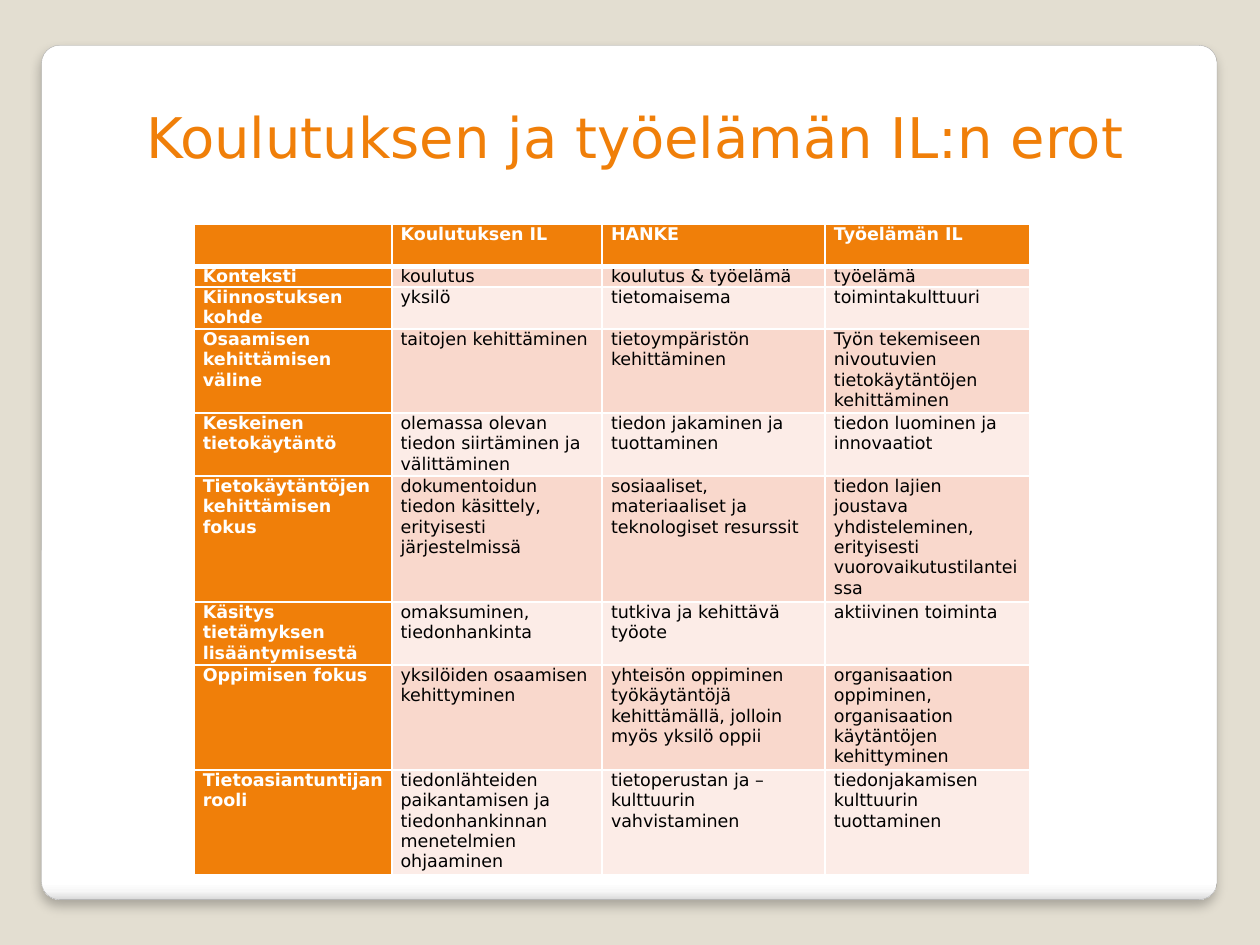
from lxml.etree import SubElement
from pptx import Presentation
from pptx.dml.color import RGBColor
from pptx.enum.shapes import MSO_SHAPE as Shape
from pptx.enum.text import MSO_ANCHOR as Anchor, MSO_AUTO_SIZE as Fit, PP_ALIGN as Align
from pptx.oxml import parse_xml
from pptx.oxml.ns import nsdecls, qn
from pptx.util import Inches, Pt

SAND = RGBColor(0xE3, 0xDE, 0xD1)
WHITE = RGBColor(0xFF, 0xFF, 0xFF)
BLACK = RGBColor(0, 0, 0)
GREY = RGBColor(0xA4, 0xA4, 0xA4)
ORANGE = RGBColor(0xF0, 0x7F, 0x09)
PINK = RGBColor(0xF9, 0xD8, 0xCC)
PALE = RGBColor(0xFC, 0xEC, 0xE7)
FONT = "DejaVu Sans"

STOPS = [(0, "FFFFFF"), (98, "FFFFFF"), (99, "F7F7F7"), (100, "DADADA")]
WIDTHS = [1.57, 1.67, 1.77, 1.62]
LINE = 1 / 6  # height of one text line in the table, in inches

# Each row: its height in text lines, then its cells
ROWS = [
    (2, "", "Koulutuksen IL", "HANKE", "Työelämän IL"),
    (1, "Konteksti", "koulutus", "koulutus & työelämä", "työelämä"),
    (2, "Kiinnostuksen kohde", "yksilö", "tietomaisema", "toimintakulttuuri"),
    (4, "Osaamisen kehittämisen väline", "taitojen kehittäminen",
     "tietoympäristön kehittäminen",
     "Työn tekemiseen nivoutuvien tietokäytäntöjen kehittäminen"),
    (3, "Keskeinen tietokäytäntö",
     "olemassa olevan tiedon siirtäminen ja välittäminen",
     "tiedon jakaminen ja tuottaminen", "tiedon luominen ja innovaatiot"),
    (6, "Tietokäytäntöjen kehittämisen fokus",
     "dokumentoidun tiedon käsittely, erityisesti järjestelmissä",
     "sosiaaliset, materiaaliset ja teknologiset resurssit",
     "tiedon lajien joustava yhdisteleminen, erityisesti vuorovaikutustilanteissa"),
    (3, "Käsitys tietämyksen lisääntymisestä", "omaksuminen, tiedonhankinta",
     "tutkiva ja kehittävä työote", "aktiivinen toiminta"),
    (5, "Oppimisen fokus", "yksilöiden osaamisen kehittyminen",
     "yhteisön oppiminen työkäytäntöjä kehittämällä, jolloin myös yksilö oppii",
     "organisaation oppiminen, organisaation käytäntöjen kehittyminen"),
    (5, "Tietoasiantuntijanrooli",
     "tiedonlähteiden paikantamisen ja tiedonhankinnan menetelmien ohjaaminen",
     "tietoperustan ja –kulttuurin vahvistaminen",
     "tiedonjakamisen kulttuurin tuottaminen"),
]


def style(par, size, color, bold=False):
    for run in par.runs:
        font = run.font
        font.name, font.size, font.bold = FONT, Pt(size), bold
        font.color.rgb = color


def add_panel(slide, x, y, w, h):
    panel = slide.shapes.add_shape(
        Shape.ROUNDED_RECTANGLE, Inches(x), Inches(y), Inches(w), Inches(h))
    panel.adjustments[0] = 0.021
    panel.line.color.rgb = GREY
    panel.line.width = Pt(0.16)
    panel.fill.gradient()
    panel.fill.gradient_angle = 270
    stops = panel._element.spPr.find(".//" + qn("a:gsLst"))
    for old in list(stops):
        stops.remove(old)
    for pos, color in STOPS:
        stop = SubElement(stops, qn("a:gs"), pos=str(pos * 1000))
        SubElement(stop, qn("a:srgbClr"), val=color)
    panel.shadow.inherit = False
    effects = panel._element.spPr.find(qn("a:effectLst"))
    effects.append(parse_xml(
        f'<a:outerShdw {nsdecls("a")} blurRad="{Pt(6)}" dist="{Pt(4)}" dir="5400000" '
        'algn="t" rotWithShape="0"><a:srgbClr val="000000"><a:alpha val="25000"/>'
        '</a:srgbClr></a:outerShdw>'))
    slide.shapes._spTree.insert(2, panel._element)  # behind the title


def set_title(slide, text, x, y, w, h):
    title = slide.shapes.title
    title.left, title.top = Inches(x), Inches(y)
    title.width, title.height = Inches(w), Inches(h)
    frame = title.text_frame
    frame.text = text
    frame.auto_size = Fit.NONE
    frame.vertical_anchor = Anchor.MIDDLE
    par = frame.paragraphs[0]
    par.alignment = Align.LEFT
    style(par, 32, ORANGE)


def set_edges(cell, top, bottom):
    """Draw white borders, with the top and bottom widths given in points."""
    props = cell._tc.get_or_add_tcPr()
    for i, (side, width) in enumerate(zip("LRTB", (1, 1, top, bottom))):
        props.insert(i, parse_xml(
            f'<a:ln{side} {nsdecls("a")} w="{Pt(width)}"><a:solidFill>'
            f'<a:srgbClr val="{WHITE}"/></a:solidFill></a:ln{side}>'))


def fill_cell(cell, text, row, col):
    head = row == 0 or col == 0
    cell.margin_left = cell.margin_right = Inches(0.07)
    cell.margin_top = cell.margin_bottom = 0
    cell.fill.solid()
    cell.fill.fore_color.rgb = ORANGE if head else PINK if row % 2 else PALE
    set_edges(cell, 3 if row == 1 else 1, 3 if row == 0 else 1)
    if text:
        cell.text_frame.text = text
        style(cell.text_frame.paragraphs[0], 10, WHITE if head else BLACK, head)


def add_grid(slide, x, y, w, h):
    table = slide.shapes.add_table(
        len(ROWS), len(WIDTHS), Inches(x), Inches(y), Inches(w), Inches(h)).table
    for col, width in zip(table.columns, WIDTHS):
        col.width = Inches(width)
    for r, (lines, *texts) in enumerate(ROWS):
        table.rows[r].height = Inches(lines * LINE)
        for c, text in enumerate(texts):
            fill_cell(table.cell(r, c), text, r, c)


def main():
    deck = Presentation()
    deck.slide_width, deck.slide_height = Inches(10), Inches(7.5)
    slide = deck.slides.add_slide(deck.slide_layouts[5])
    slide.background.fill.solid()
    slide.background.fill.fore_color.rgb = SAND
    add_panel(slide, 0.33, 0.36, 9.33, 6.78)
    set_title(slide, "Koulutuksen ja työelämän IL:n erot", 1.06, 0.76, 8.35, 0.64)
    add_grid(slide, 1.54, 1.78, sum(WIDTHS), 5.17)
    deck.save("out.pptx")


if __name__ == "__main__":
    main()
